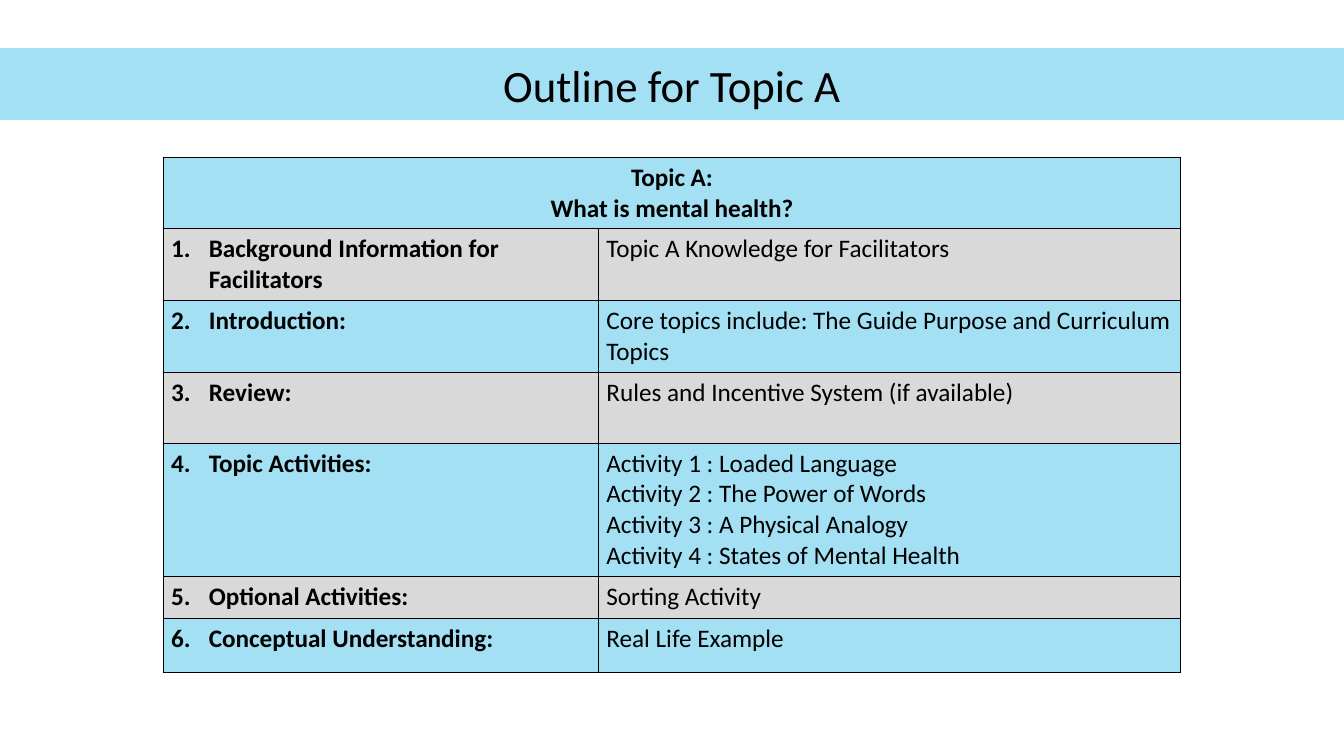
import pptx
import pptx.dml.color
import pptx.enum.text
import pptx.oxml
import pptx.oxml.ns
import pptx.util
from lxml import etree

Pt = pptx.util.Pt
CENTER = pptx.enum.text.PP_ALIGN.CENTER
LEFT = pptx.enum.text.PP_ALIGN.LEFT
MIDDLE = pptx.enum.text.MSO_ANCHOR.MIDDLE
TOP = pptx.enum.text.MSO_ANCHOR.TOP

SKY, GREY, BLACK = "A3E0F4", "D9D9D9", "000000"

TOPIC = ["Topic A:", "What is mental health?"]
OUTLINE = [
    ("Background Information for Facilitators", ["Topic A Knowledge for Facilitators"]),
    ("Introduction:", ["Core topics include: The Guide Purpose and Curriculum Topics"]),
    ("Review:", ["Rules and Incentive System (if available)"]),
    ("Topic Activities:", [
        "Activity 1 : Loaded Language",
        "Activity 2 : The Power of Words",
        "Activity 3 : A Physical Analogy",
        "Activity 4 : States of Mental Health",
    ]),
    ("Optional Activities:", ["Sorting Activity"]),
    ("Conceptual Understanding:", ["Real Life Example"]),
]
COLUMN_WIDTHS = [311, 415.5]
ROW_HEIGHTS = [51.2, 51.2, 51.2, 50.6, 95.5, 30, 38.5]


def rgb(value):
    return pptx.dml.color.RGBColor.from_string(value)


def apply(target, values):
    """Set each attribute named in values on target."""
    for name, value in values.items():
        setattr(target, name, value)


def add_element(parent, tag, **attributes):
    return etree.SubElement(parent, pptx.oxml.ns.qn(tag), attributes)


class OutlineSlide:
    font = "Calibri"
    title_size = 32
    body_size = 18
    number_indent = 27

    def __init__(self, deck):
        self.slide = deck.slides.add_slide(deck.slide_layouts[5])

    def paint(self, fill, color):
        fill.solid()
        fill.fore_color.rgb = rgb(color)

    def set_text(self, frame, lines, size, bold=False, align=LEFT, number=None):
        """Fill a text frame, one paragraph a line, numbered from number if given."""
        frame.text = "\n".join(lines)
        for paragraph in frame.paragraphs:
            if number:
                self.add_number(paragraph, number)
            paragraph.alignment = align
            for run in paragraph.runs:
                apply(run.font, {"name": self.font, "size": Pt(size), "bold": bold})
                run.font.color.rgb = rgb(BLACK)

    def add_number(self, paragraph, number):
        properties = paragraph._p.get_or_add_pPr()
        indent = Pt(self.number_indent)
        properties.set("marL", str(indent))
        properties.set("indent", str(-indent))
        add_element(properties, "a:buFont", typeface="+mj-lt")
        add_element(properties, "a:buAutoNum", type="arabicPeriod", startAt=str(number))

    def add_title(self, text, left, top, width, height):
        banner = self.slide.shapes.title
        apply(banner, {"left": Pt(left), "top": Pt(top),
                       "width": Pt(width), "height": Pt(height)})
        outline = add_element(banner._element.spPr, "a:prstGeom", prst="roundRect")
        add_element(outline, "a:avLst")
        self.paint(banner.fill, SKY)
        self.paint(banner.line.fill, SKY)
        banner.line.width = Pt(0.75)
        frame = banner.text_frame
        self.set_text(frame, [text], self.title_size, align=CENTER)
        apply(frame, {"vertical_anchor": MIDDLE, "word_wrap": True,
                      "auto_size": pptx.enum.text.MSO_AUTO_SIZE.NONE,
                      "margin_left": Pt(5), "margin_right": Pt(5),
                      "margin_top": Pt(5), "margin_bottom": Pt(5)})

    def add_table(self, left, top, widths, heights):
        table = self.slide.shapes.add_table(
            len(heights), len(widths), Pt(left), Pt(top),
            Pt(sum(widths)), Pt(sum(heights))).table
        for column, width in zip(table.columns, widths):
            column.width = Pt(width)
        for row, height in zip(table.rows, heights):
            row.height = Pt(height)
        return table

    def format_cell(self, cell, color):
        """Give a cell its margins, thin black borders and fill."""
        apply(cell, {"margin_left": Pt(5.4), "margin_right": Pt(5.4),
                     "margin_top": Pt(3.6), "margin_bottom": Pt(3.6),
                     "vertical_anchor": TOP})
        properties = cell._tc.get_or_add_tcPr()
        for side in ("a:lnL", "a:lnR", "a:lnT", "a:lnB"):
            border = add_element(properties, side, w=str(Pt(0.75)))
            stroke = add_element(border, "a:solidFill")
            add_element(stroke, "a:srgbClr", val=BLACK)
        self.paint(cell.fill, color)

    def add_outline(self, left, top):
        table = self.add_table(left, top, COLUMN_WIDTHS, ROW_HEIGHTS)
        for index, row in enumerate(table.rows):
            for cell in row.cells:
                self.format_cell(cell, GREY if index % 2 else SKY)
        heading = table.cell(0, 0)
        heading.merge(table.cell(0, 1))
        self.set_text(heading.text_frame, TOPIC, self.body_size, bold=True, align=CENTER)
        for number, (part, details) in enumerate(OUTLINE, 1):
            self.set_text(table.cell(number, 0).text_frame, [part], self.body_size,
                          bold=True, number=number)
            self.set_text(table.cell(number, 1).text_frame, details, self.body_size)


def main():
    deck = pptx.Presentation()
    apply(deck, {"slide_width": Pt(960), "slide_height": Pt(540)})
    outline = OutlineSlide(deck)
    outline.add_title("Outline for Topic A", 0, 34.5, 960, 51.2)
    outline.add_outline(116.8, 112.3)
    deck.save("out.pptx")


if __name__ == "__main__":
    main()
